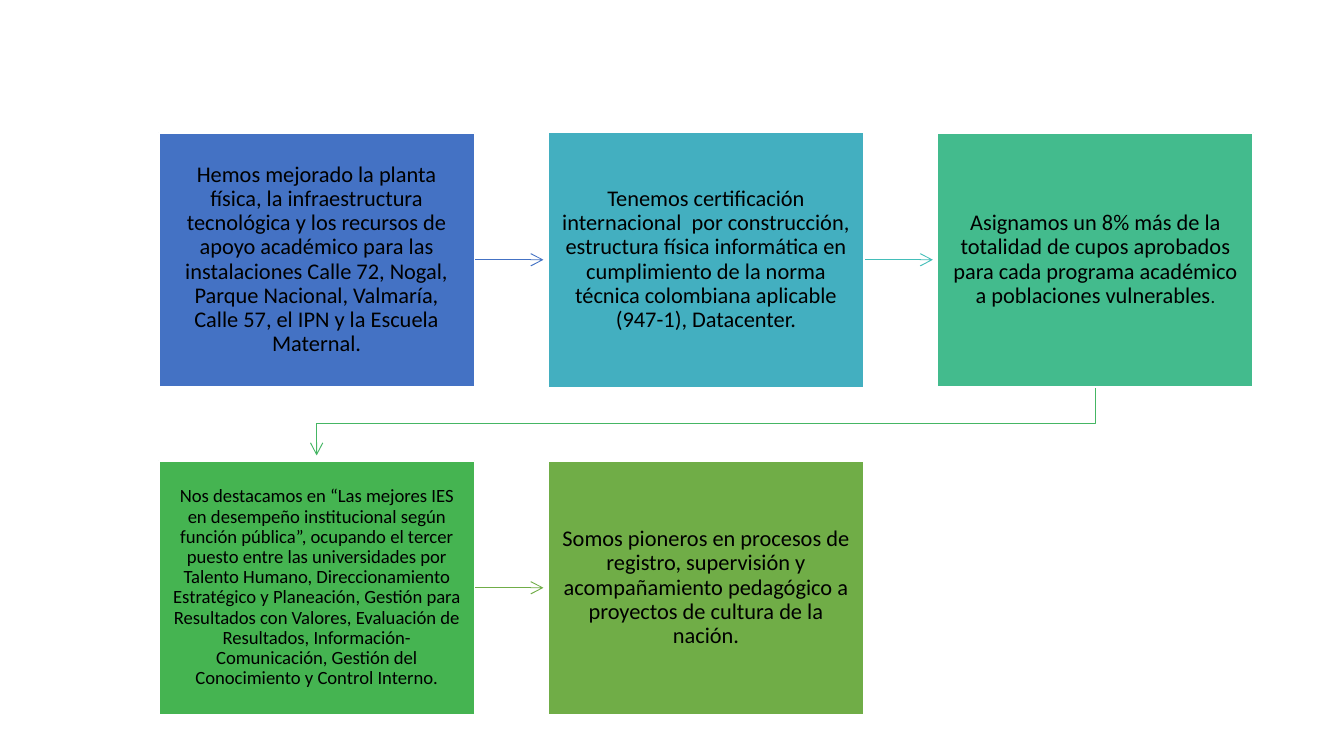
from lxml import etree
from pptx import Presentation
from pptx.dml.color import RGBColor
from pptx.enum.shapes import MSO_CONNECTOR, MSO_SHAPE
from pptx.enum.text import MSO_ANCHOR, PP_ALIGN
from pptx.oxml.ns import qn
from pptx.util import Cm, Pt

RECT = MSO_SHAPE.RECTANGLE
STRAIGHT = MSO_CONNECTOR.STRAIGHT
MIDDLE = MSO_ANCHOR.MIDDLE
CENTER = PP_ALIGN.CENTER

BLACK = RGBColor(0x00, 0x00, 0x00)
WHITE = RGBColor(0xFF, 0xFF, 0xFF)
BLUE = RGBColor(0x44, 0x72, 0xC4)
CYAN = RGBColor(0x43, 0xAF, 0xC0)
TURQUOISE = RGBColor(0x43, 0xBE, 0xB9)
TEAL = RGBColor(0x43, 0xBB, 0x8D)
MINT = RGBColor(0x45, 0xB6, 0x64)
GREEN = RGBColor(0x45, 0xB4, 0x51)
OLIVE = RGBColor(0x70, 0xAD, 0x47)

# runs (text, size), fill, inset, extra height above and below
ACHIEVEMENTS = [
    ([("Hemos mejorado la planta física, la infraestructura tecnológica y los "
       "recursos de apoyo académico para las instalaciones Calle 72, Nogal, "
       "Parque Nacional, Valmaría, Calle 57, el IPN y la Escuela Maternal.", 12)],
     BLUE, 0.23, 0),
    ([("Tenemos certificación internacional  por construcción, estructura "
       "física informática en cumplimiento de la norma técnica colombiana "
       "aplicable (947-1), Datacenter.", 12)],
     CYAN, 0.23, 0.02),
    ([("Asignamos un 8% más de la totalidad de cupos aprobados para cada "
       "programa académico a poblaciones vulnerables", 12), (".", 10)],
     TEAL, 0.23, 0),
    ([("Nos destacamos en “Las mejores IES en desempeño institucional según "
       "función pública”, ocupando el tercer puesto entre las universidades "
       "por Talento Humano, Direccionamiento Estratégico y Planeación, Gestión "
       "para Resultados con Valores, Evaluación de Resultados, "
       "Información-Comunicación, Gestión del Conocimiento y Control Interno.", 10)],
     GREEN, 0.2, 0),
    ([("Somos pioneros en procesos de registro, supervisión y acompañamiento "
       "pedagógico a proyectos de cultura de la nación.", 12)],
     OLIVE, 0.23, 0),
]
ARROW_COLORS = [BLUE, TURQUOISE, MINT, OLIVE]

COLS = 3
LEFT, TOP = 3.0, 2.51
BOX_W, BOX_H = 5.97, 4.8
PITCH_X, PITCH_Y = 7.36, 6.2
ARROW_LEN = 1.3
ARROW_GAP = 0.1


def box_origin(i):
    row, col = divmod(i, COLS)
    return LEFT + col * PITCH_X, TOP + row * PITCH_Y


def style_arrow(sp, color):
    sp.line.color.rgb = color
    sp.line.width = Pt(0.5)
    ln = sp.line._get_or_add_ln()
    etree.SubElement(ln, qn("a:tailEnd"), type="arrow")


def add_straight_arrow(s, i, color):
    x, y = box_origin(i)
    x, y = x + BOX_W, y + BOX_H / 2
    cx = s.shapes.add_connector(STRAIGHT, Cm(x), Cm(y), Cm(x + ARROW_LEN), Cm(y))
    style_arrow(cx, color)
    etree.SubElement(cx._element.spPr, qn("a:effectLst"))


def add_row_arrow(s, i, color):
    x1, y1 = box_origin(i)
    x2, y2 = box_origin(i + 1)
    x1, x2, y1 = x1 + BOX_W / 2, x2 + BOX_W / 2, y1 + BOX_H
    mid = (y1 + y2) / 2
    route = [(x1, mid), (x2, mid), (x2, y2 - ARROW_GAP)]
    fb = s.shapes.build_freeform(Cm(x1), Cm(y1))
    fb.add_line_segments([(Cm(x), Cm(y)) for x, y in route], close=False)
    sp = fb.convert_to_shape()
    sp.shadow.inherit = False
    sp.fill.background()
    style_arrow(sp, color)


def add_box(s, i, runs, fill, inset, extra):
    x, y = box_origin(i)
    sp = s.shapes.add_shape(RECT, Cm(x), Cm(y - extra), Cm(BOX_W), Cm(BOX_H + 2 * extra))
    sp.shadow.inherit = False
    sp.fill.solid()
    sp.fill.fore_color.rgb = fill
    sp.line.color.rgb = WHITE
    sp.line.width = Pt(1)
    tf = sp.text_frame
    tf.word_wrap = True
    tf.vertical_anchor = MIDDLE
    tf.margin_left = tf.margin_right = tf.margin_top = tf.margin_bottom = Cm(inset)
    p = tf.paragraphs[0]
    p.alignment = CENTER
    p.line_spacing = 0.9
    for text, size in runs:
        r = p.add_run()
        r.text = text
        r.font.name = "Calibri"
        r.font.size = Pt(size)
        r.font.color.rgb = BLACK


def main():
    prs = Presentation()
    prs.slide_width, prs.slide_height = Cm(25.4), Cm(14.29)
    s = prs.slides.add_slide(prs.slide_layouts[6])
    for i, color in enumerate(ARROW_COLORS):
        add_arrow = add_row_arrow if i % COLS == COLS - 1 else add_straight_arrow
        add_arrow(s, i, color)
    for i, achievement in enumerate(ACHIEVEMENTS):
        add_box(s, i, *achievement)
    prs.save("out.pptx")


if __name__ == "__main__":
    main()
